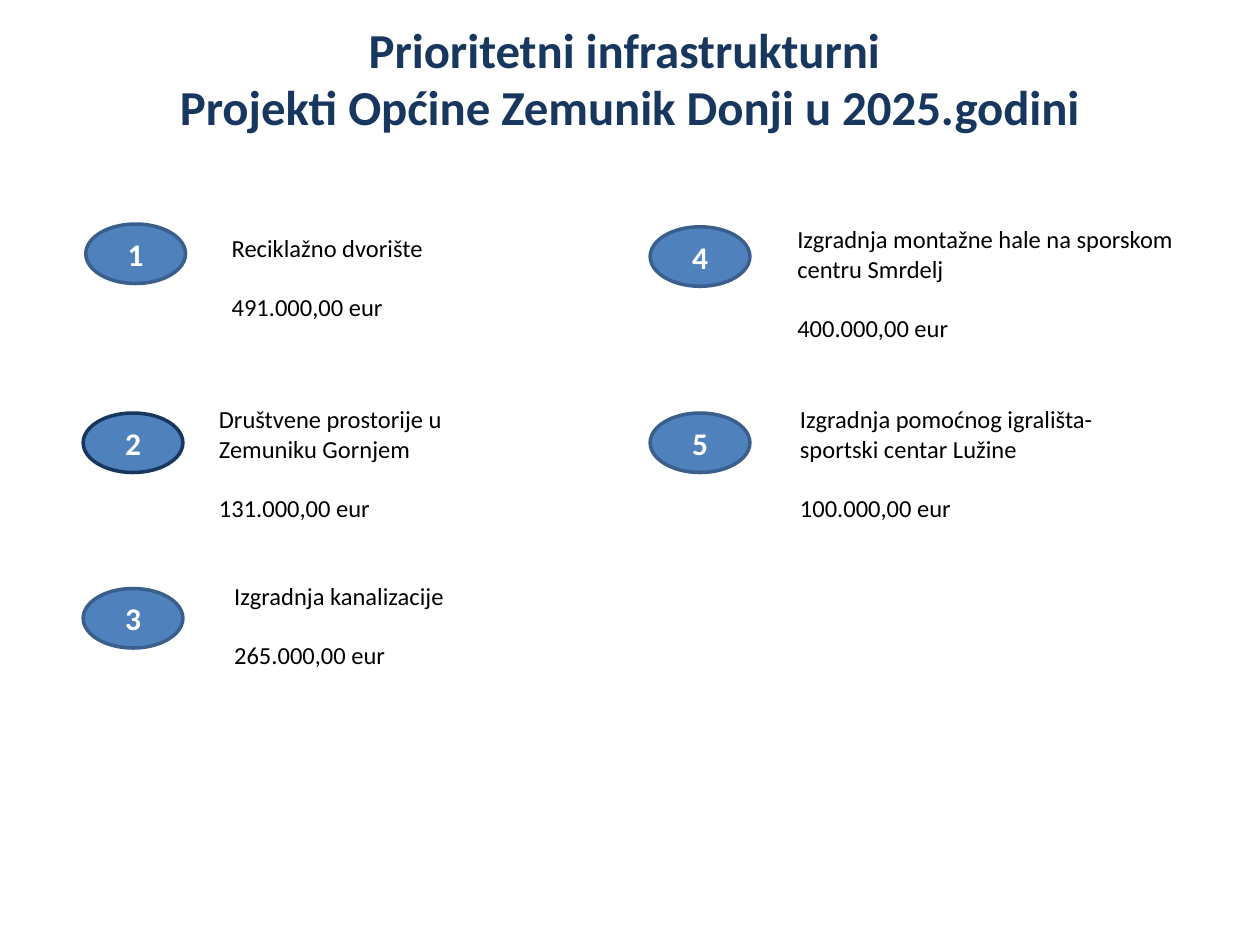
from dataclasses import dataclass

import pptx
import pptx.dml.color
import pptx.enum.shapes
import pptx.enum.text
import pptx.util

Pt = pptx.util.Pt
NAVY, BLUE, EDGE = "17375E", "4F81BD", "3A5F8C"
BADGE_W, BADGE_H = 57, 34


@dataclass
class Project:
    number: int
    badge: tuple[float, float]
    text: tuple[float, float, float, float]
    name: list[str]
    cost: str
    edge: str = EDGE


PROJECTS = [
    Project(1, (49, 128), (125.3, 129.6, 125.3, 58.3),
            ["Reciklažno dvorište"], "491.000,00 eur"),
    Project(2, (47.5, 236), (118, 227.5, 146, 75),
            ["Društvene prostorije u", "Zemuniku Gornjem"], "131.000,00 eur", NAVY),
    Project(3, (47.5, 336.3), (126.7, 328.3, 135.4, 58.3),
            ["Izgradnja kanalizacije"], "265.000,00 eur"),
    Project(4, (371.5, 129.6), (448.5, 124.6, 234, 75),
            ["Izgradnja montažne hale na sporskom", "centru Smrdelj"], "400.000,00 eur"),
    Project(5, (371.5, 236), (450, 227.5, 183.6, 75),
            ["Izgradnja pomoćnog igrališta-", "sportski centar Lužine"], "100.000,00 eur"),
]


def rgb(value: str) -> pptx.dml.color.RGBColor:
    return pptx.dml.color.RGBColor.from_string(value)


def style(p, size: float, color: str, bold: bool = False, centred: bool = False) -> None:
    p.font.name, p.font.size, p.font.bold = "Calibri", Pt(size), bold
    p.font.color.rgb = rgb(color)
    align = pptx.enum.text.PP_ALIGN
    p.alignment = align.CENTER if centred else align.LEFT


def add_title(s) -> None:
    tf = s.shapes.add_textbox(Pt(36), Pt(8), Pt(648), Pt(73)).text_frame
    tf.word_wrap = True
    tf.vertical_anchor = pptx.enum.text.MSO_ANCHOR.MIDDLE
    p = tf.paragraphs[0]
    p.text = "Prioritetni infrastrukturni \vProjekti Općine Zemunik Donji u 2025.godini"
    p.line_spacing = Pt(33)
    style(p, 27.9, NAVY, bold=True, centred=True)


def add_badge(s, project: Project) -> None:
    left, top = project.badge
    sp = s.shapes.add_shape(pptx.enum.shapes.MSO_SHAPE.OVAL,
                            Pt(left), Pt(top), Pt(BADGE_W), Pt(BADGE_H))
    sp.shadow.inherit = False
    sp.fill.solid()
    sp.fill.fore_color.rgb = rgb(BLUE)
    sp.line.color.rgb = rgb(project.edge)
    sp.line.width = Pt(2)
    tf = sp.text_frame
    tf.vertical_anchor = pptx.enum.text.MSO_ANCHOR.MIDDLE
    tf.text = str(project.number)
    style(tf.paragraphs[0], 18, "FFFFFF", bold=True, centred=True)


def add_description(s, project: Project) -> None:
    tf = s.shapes.add_textbox(*map(Pt, project.text)).text_frame
    tf.word_wrap = False
    tf.auto_size = pptx.enum.text.MSO_AUTO_SIZE.SHAPE_TO_FIT_TEXT
    tf.text = "\n".join([*project.name, project.cost])
    for p in tf.paragraphs:
        style(p, 14, "000000")
    tf.paragraphs[-1].space_before = Pt(17)


def main() -> None:
    prs = pptx.Presentation()
    prs.slide_width, prs.slide_height = Pt(720), Pt(540)
    s = prs.slides.add_slide(prs.slide_layouts[6])
    add_title(s)
    for project in PROJECTS:
        add_badge(s, project)
        add_description(s, project)
    prs.save("out.pptx")


if __name__ == "__main__":
    main()
